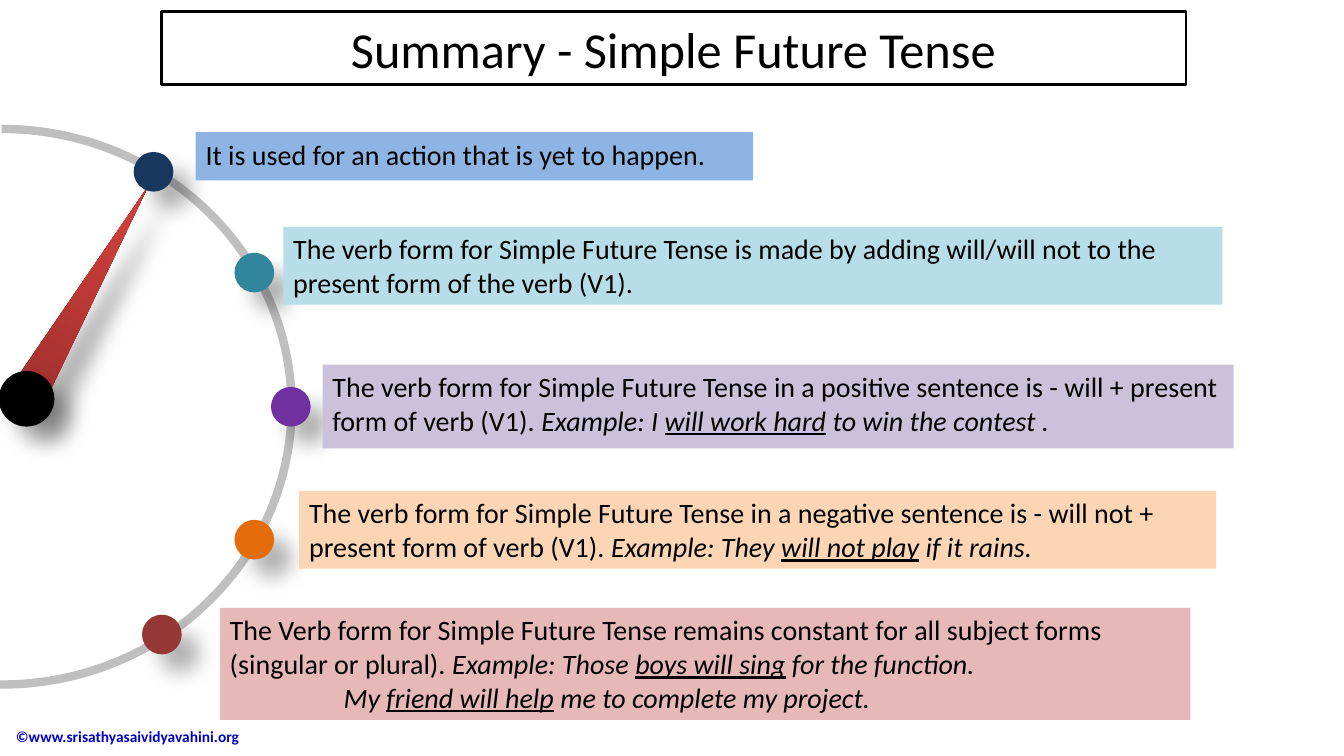
import pptx
import pptx.dml.color
import pptx.enum.shapes
import pptx.enum.text
import pptx.oxml
import pptx.oxml.ns
import pptx.util

Cm = pptx.util.Cm
Pt = pptx.util.Pt
MSO = pptx.enum.shapes.MSO_SHAPE
ANCHOR = pptx.enum.text.MSO_ANCHOR
NS = pptx.oxml.ns.nsdecls("a")

DOT_SIZE = 1.0
# Dot colour, dot centre, panel colour, panel box, paragraphs of (text, style) runs;
# style letters: i italic, u underlined
POINTS = [
    ("17375E", (3.87, 4.33), "8EB4E3", (4.93, 3.33, 14.05, 1.22), [
        [("It is used for an action that is yet to happen.", "")]]),
    ("31859C", (6.41, 6.87), "B7DEE8", (7.14, 5.72, 23.67, 1.96), [
        [("The verb form for Simple Future Tense is made by adding will/will not "
          "to the present form of the verb (V1).", "")]]),
    ("7030A0", (7.33, 10.25), "CCC1DA", (8.13, 9.19, 22.96, 2.11), [
        [("The verb form for Simple Future Tense in a positive sentence is - will + "
          "present form of verb (V1). ", ""),
         ("Example: I ", "i"), ("will work hard", "iu"), (" to win the contest .", "i")]]),
    ("E46C0A", (6.41, 13.6), "FCD5B5", (7.54, 12.37, 23.11, 1.96), [
        [("The verb form for Simple Future Tense in a negative sentence is - will not + "
          "present form of verb (V1).", ""),
         (" Example: They ", "i"), ("will not play", "iu"), (" if it rains.", "i")]]),
    ("953735", (4.08, 15.99), "E6B9B8", (5.54, 15.32, 24.46, 2.82), [
        [("The Verb form for Simple Future Tense remains constant for all subject forms "
          "(singular or plural). ", ""),
         ("Example: Those ", "i"), ("boys will sing", "iu"), (" for the function.", "i")],
        [("My ", "i"), ("friend will help", "iu"),
         (" me to complete my project.", "i")]]),
]


def rgb(hex_colour):
    return pptx.dml.color.RGBColor.from_string(hex_colour)


def add_run(p, text, size, colour="000000", style=""):
    r = p.add_run()
    r.text = text
    r.font.name = "Calibri"
    r.font.size = Pt(size)
    r.font.color.rgb = rgb(colour)
    if "b" in style:
        r.font.bold = True
    if "i" in style:
        r.font.italic = True
    if "u" in style:
        r.font.underline = True


def add_plain_shape(slide, kind, box, colour=None):
    """Add a shape with no outline or shadow, unfilled if no colour is given."""
    sp = slide.shapes.add_shape(kind, *map(Cm, box))
    sp.shadow.inherit = False
    sp.line.fill.background()
    if colour:
        sp.fill.solid()
        sp.fill.fore_color.rgb = rgb(colour)
    else:
        sp.fill.background()
    return sp


def add_soft_shadow(sp):
    effects = sp._element.spPr.find(pptx.oxml.ns.qn("a:effectLst"))
    effects.append(pptx.oxml.parse_xml(
        f'<a:outerShdw {NS} blurRad="{Pt(15)}" dist="{Pt(18)}" dir="2700000" '
        'algn="tl" rotWithShape="0"><a:srgbClr val="000000">'
        '<a:alpha val="30000"/></a:srgbClr></a:outerShdw>'))


def fill_red_gradient(sp):
    sp.fill.gradient()
    grad = sp._element.spPr.find(pptx.oxml.ns.qn("a:gradFill"))
    stops = [(0, "9C2F2D"), (80, "CB3E3A"), (100, "CE3B37")]
    gs = "".join(f'<a:gs pos="{pos * 1000}"><a:srgbClr val="{colour}"/></a:gs>'
                 for pos, colour in stops)
    grad.getparent().replace(grad, pptx.oxml.parse_xml(
        f'<a:gradFill {NS} rotWithShape="1"><a:gsLst>{gs}</a:gsLst>'
        '<a:lin ang="16200000" scaled="0"/></a:gradFill>'))


def add_title(slide, box, text):
    title = slide.shapes.title
    title.left, title.top, title.width, title.height = map(Cm, box)
    title.fill.solid()
    title.fill.fore_color.rgb = rgb("FFFFFF")
    title.line.color.rgb = rgb("000000")
    title.line.width = Pt(2)
    tf = title.text_frame
    tf.vertical_anchor = ANCHOR.MIDDLE
    p = tf.paragraphs[0]
    p.alignment = pptx.enum.text.PP_ALIGN.CENTER
    add_run(p, text, 36)


def add_dial(slide, box):
    """Draw the needle, its hub and the right half of the dial that fills the box."""
    left, top, width, height = box
    needle = add_plain_shape(slide, MSO.ISOSCELES_TRIANGLE,
                             (left + 8.89, top + 1.04, 0.99, 6.38))
    needle.rotation = 30
    fill_red_gradient(needle)
    add_soft_shadow(needle)

    hub = add_plain_shape(slide, MSO.OVAL, (left + 7.23, top + 6.1, 1.4, 1.4), "000000")
    add_soft_shadow(hub)

    rim = add_plain_shape(slide, MSO.ARC, box)
    rim.adjustments[0] = 162
    rim.adjustments[1] = 54.573
    rim.line.color.rgb = rgb("BFBFBF")
    rim.line.width = Pt(6)


def add_dot(slide, centre, colour):
    x, y = centre
    dot = add_plain_shape(slide, MSO.OVAL, (x - DOT_SIZE / 2, y - DOT_SIZE / 2,
                                            DOT_SIZE, DOT_SIZE), colour)
    add_soft_shadow(dot)


def add_panel(slide, box, colour, paragraphs):
    tf = add_plain_shape(slide, MSO.RECTANGLE, box, colour).text_frame
    tf.word_wrap = True
    tf.vertical_anchor = ANCHOR.TOP
    for i, runs in enumerate(paragraphs):
        p = tf.add_paragraph() if i else tf.paragraphs[0]
        p.alignment = pptx.enum.text.PP_ALIGN.LEFT
        if i:
            p._p.get_or_add_pPr().set("marL", str(Cm(2.87)))
        for text, style in runs:
            add_run(p, text, 20, style=style)


def add_copyright(slide, box, text):
    tf = slide.shapes.add_textbox(*map(Cm, box)).text_frame
    tf.word_wrap = True
    tf.vertical_anchor = ANCHOR.MIDDLE
    add_run(tf.paragraphs[0], text, 11, "0000CC", "b")


def main():
    prs = pptx.Presentation()
    prs.slide_width, prs.slide_height = Cm(33.87), Cm(19.05)
    slide = prs.slides.add_slide(prs.slide_layouts.get_by_name("Title Only"))
    add_copyright(slide, (0.15, 18.03, 8.97, 1.04), "©www.srisathyasaividyavahini.org")
    add_title(slide, (4.06, 0.3, 25.83, 1.83), "Summary - Simple Future Tense")
    add_dial(slide, (-7.26, 3.25, 14.61, 14))
    for dot_colour, centre, *_ in POINTS:
        add_dot(slide, centre, dot_colour)
    for _, _, colour, box, paragraphs in POINTS:
        add_panel(slide, box, colour, paragraphs)
    prs.save("out.pptx")


if __name__ == "__main__":
    main()
